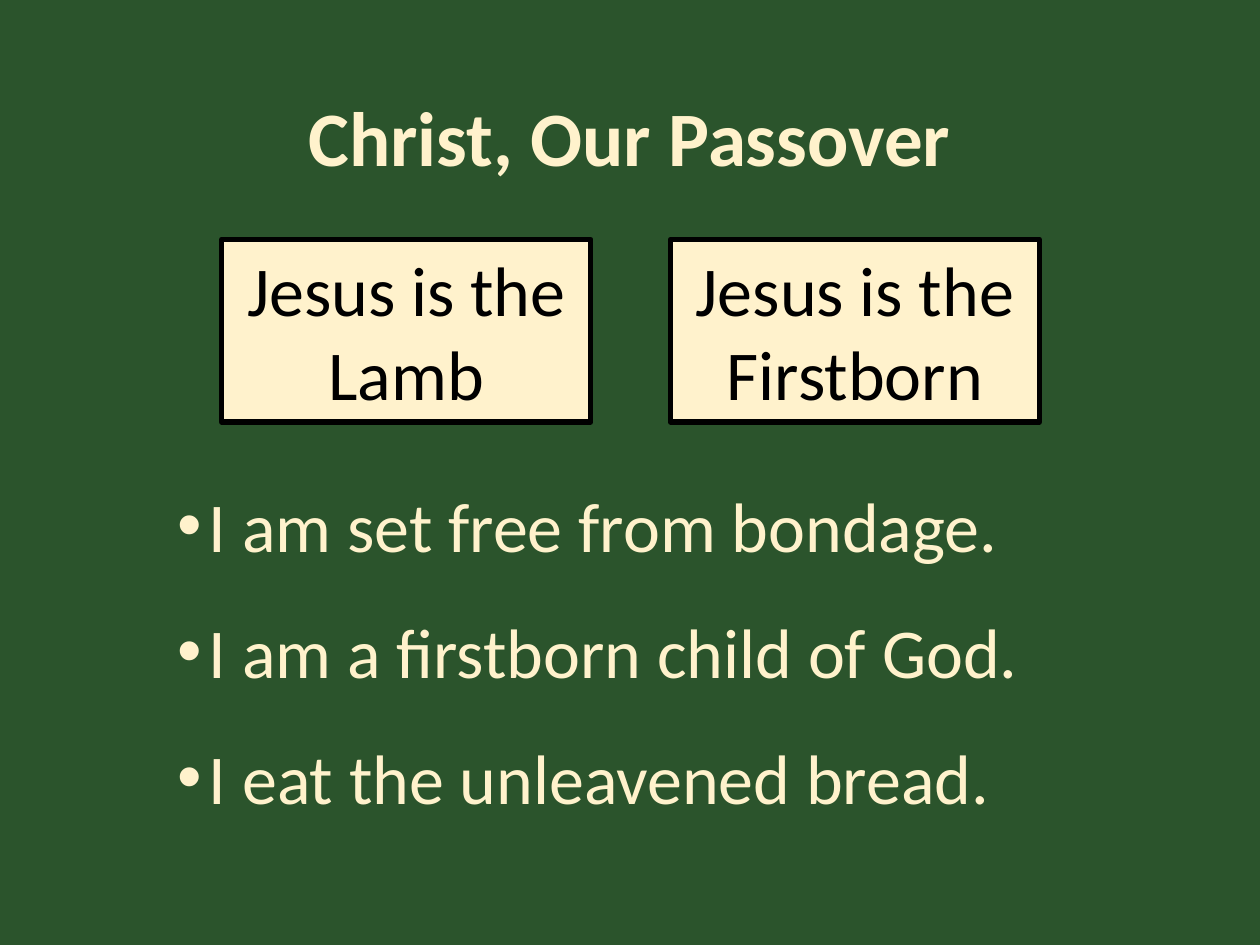
"""Build the "Christ, Our Passover" slide."""
from dataclasses import dataclass

from lxml import etree
from pptx import Presentation
from pptx.dml.color import RGBColor
from pptx.enum.shapes import MSO_SHAPE
from pptx.enum.text import MSO_ANCHOR, PP_ALIGN
from pptx.oxml.ns import qn
from pptx.util import Inches, Pt

RECTANGLE = MSO_SHAPE.RECTANGLE
MIDDLE = MSO_ANCHOR.MIDDLE
CENTER = PP_ALIGN.CENTER
LEFT = PP_ALIGN.LEFT


@dataclass(frozen=True)
class Theme:
    green: RGBColor = RGBColor(0x2B, 0x54, 0x2C)
    cream: RGBColor = RGBColor(0xFF, 0xF2, 0xCC)
    black: RGBColor = RGBColor(0, 0, 0)
    font: str = "Calibri"
    title_size: Pt = Pt(44)
    body_size: Pt = Pt(40)


theme = Theme()


def format_text(para, size, color, align, bold=False):
    para.alignment = align
    for span in para.runs:
        span.font.name = theme.font
        span.font.size = size
        span.font.bold = bold
        span.font.color.rgb = color


deck = Presentation()
deck.slide_width, deck.slide_height = Inches(10), Inches(7.5)
page = deck.slides.add_slide(deck.slide_layouts[5])
page.background.fill.solid()
page.background.fill.fore_color.rgb = theme.green

title = page.shapes.title
title.left, title.top = Inches(0.69), Inches(0.4)
title.width, title.height = Inches(8.62), Inches(1.45)
title.text_frame.text = "Christ, Our Passover"
title.text_frame.vertical_anchor = MIDDLE
heading = title.text_frame.paragraphs[0]
heading.line_spacing = 0.9
format_text(heading, theme.title_size, theme.cream, CENTER, bold=True)

body = page.shapes.add_textbox(Inches(1.31), Inches(3.78), Inches(7.39), Inches(2.91))
body.text_frame.word_wrap = True
body.text_frame.text = "\n".join([
    "I am set free from bondage.",
    "I am a firstborn child of God.",
    "I eat the unleavened bread.",
])
for para in body.text_frame.paragraphs:
    format_text(para, theme.body_size, theme.cream, LEFT)
    para.space_after = Pt(24)
    properties = para._p.get_or_add_pPr()
    properties.set("marL", str(Inches(0.25)))
    properties.set("indent", str(Inches(-0.25)))
    etree.SubElement(properties, qn("a:buFont"), typeface="Arial")
    etree.SubElement(properties, qn("a:buChar"), char="•")

for column, role in enumerate(["Lamb", "Firstborn"]):
    box = page.shapes.add_shape(
        RECTANGLE, Inches(1.76 + 3.56 * column), Inches(1.9), Inches(2.93), Inches(1.45)
    )
    box.shadow.inherit = False
    box.fill.solid()
    box.fill.fore_color.rgb = theme.cream
    box.line.color.rgb = theme.black
    box.line.width = Pt(3)
    box.text_frame.word_wrap = True
    box.text_frame.text = f"Jesus is the {role}"
    format_text(box.text_frame.paragraphs[0], theme.body_size, theme.black, CENTER)

deck.save("out.pptx")
